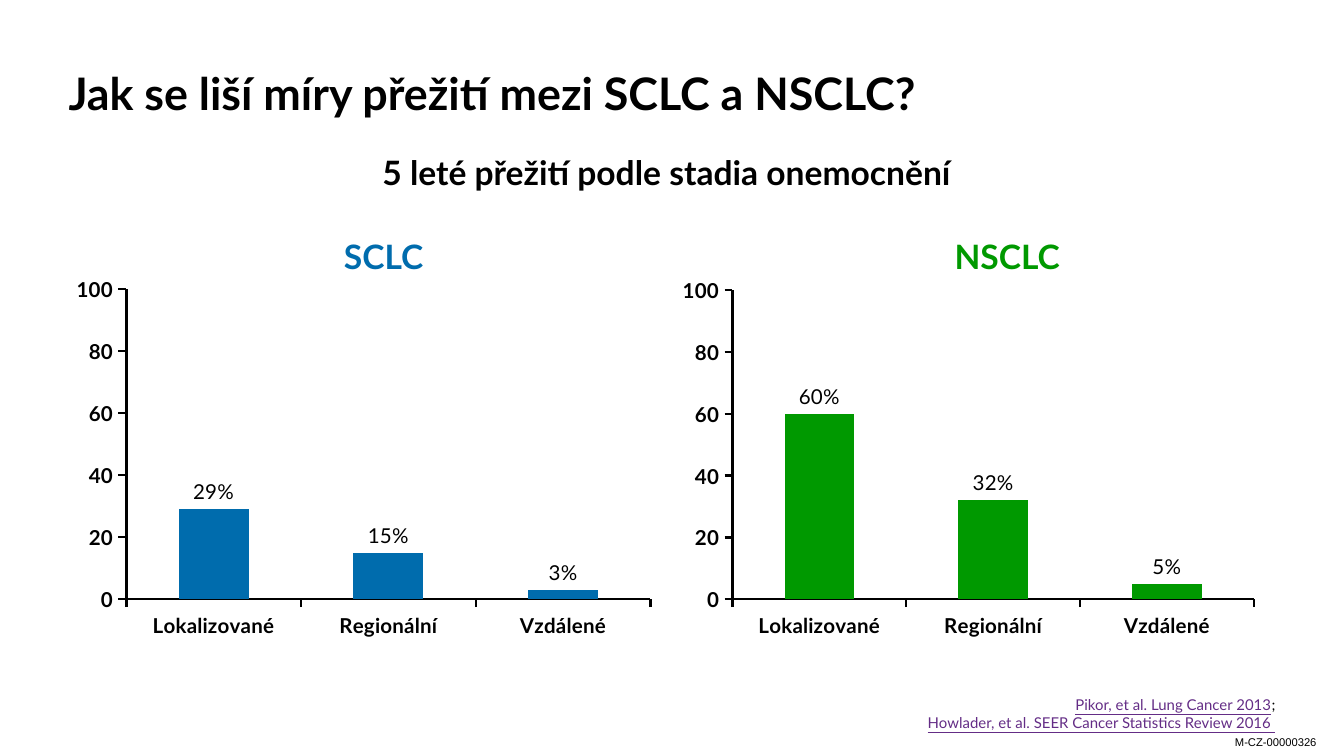
from lxml.etree import SubElement
from pptx import Presentation
from pptx.chart.data import CategoryChartData
from pptx.dml.color import RGBColor
from pptx.enum.chart import XL_CHART_TYPE, XL_LABEL_POSITION, XL_TICK_MARK
from pptx.enum.text import MSO_ANCHOR, PP_ALIGN
from pptx.oxml import parse_xml
from pptx.oxml.ns import nsdecls, qn
from pptx.util import Inches, Pt

BLACK = RGBColor(0x00, 0x00, 0x00)
BLUE = RGBColor(0x00, 0x6C, 0xAD)
GREEN = RGBColor(0x00, 0x99, 0x00)
PURPLE = RGBColor(0x64, 0x2D, 0x86)
STAGES = ["Lokalizované", "Regionální", "Vzdálené"]


def add_run(p, text, size=18, color=BLACK, bold=False, underline=False, font="Lato"):
    r = p.add_run()
    r.text = text
    r.font.name = font
    r.font.size = Pt(size)
    r.font.bold = bold
    r.font.underline = underline
    r.font.color.rgb = color


class SlideBuilder:
    font = "Lato"
    axis_width = Pt(1.25)

    def __init__(self, prs):
        self.slide = prs.slides.add_slide(prs.slide_layouts[5])

    def frame(self, sp, align, anchor, inset, wrap=True):
        tf = sp.text_frame
        tf.word_wrap = wrap
        tf.vertical_anchor = anchor
        if not inset:
            tf.margin_left = tf.margin_right = tf.margin_top = tf.margin_bottom = 0
        p = tf.paragraphs[0]
        p.alignment = align
        return p

    def title(self, box, text):
        sp = self.slide.shapes.title
        sp.left, sp.top, sp.width, sp.height = map(Inches, box)
        p = self.frame(sp, PP_ALIGN.LEFT, MSO_ANCHOR.BOTTOM, False)
        add_run(p, text, size=24, bold=True)

    def text(self, box, align=PP_ALIGN.CENTER, anchor=MSO_ANCHOR.TOP, inset=True, wrap=True):
        sp = self.slide.shapes.add_textbox(*map(Inches, box))
        return self.frame(sp, align, anchor, inset, wrap)

    def heading(self, box, text, color=BLACK):
        add_run(self.text(box), text, color=color, bold=True)

    def column_chart(self, box, values, color, plot_box):
        data = CategoryChartData()
        data.categories = STAGES
        data.add_series("Series 1", values)
        chart = self.slide.shapes.add_chart(
            XL_CHART_TYPE.COLUMN_CLUSTERED, *map(Inches, box), data
        ).chart
        chart.has_title = False
        chart.has_legend = False
        chart.font.name = self.font
        chart.font.size = Pt(11)
        chart.font.bold = True
        chart.font.color.rgb = BLACK
        self.axes(chart)
        self.bars(chart.plots[0], color)
        width, height = box[2:]
        self.plot_layout(chart, [a / b for a, b in zip(plot_box, (width, height) * 2)])

    def axes(self, chart):
        for axis in (chart.category_axis, chart.value_axis):
            axis.has_major_gridlines = False
            axis.major_tick_mark = XL_TICK_MARK.OUTSIDE
            axis.minor_tick_mark = XL_TICK_MARK.NONE
            axis.format.line.color.rgb = BLACK
            axis.format.line.width = self.axis_width
        axis = chart.value_axis
        axis.minimum_scale, axis.maximum_scale, axis.major_unit = 0, 100, 20

    def bars(self, plot, color):
        plot.vary_by_categories = False
        plot.gap_width = 150
        fill = plot.series[0].format.fill
        fill.solid()
        fill.fore_color.rgb = color
        plot.has_data_labels = True
        labels = plot.data_labels
        labels.show_value = True
        labels.position = XL_LABEL_POSITION.OUTSIDE_END
        labels.number_format = '0"%"'
        labels.number_format_is_linked = False
        labels.font.name = self.font
        labels.font.size = Pt(11)
        labels.font.bold = False
        labels.font.color.rgb = BLACK

    def plot_layout(self, chart, fractions):
        area = chart.element.find(".//" + qn("c:plotArea"))
        for old in area.findall(qn("c:layout")):
            area.remove(old)
        layout = parse_xml(f"<c:layout {nsdecls('c')}><c:manualLayout/></c:layout>")
        settings = [("layoutTarget", "inner"), ("xMode", "edge"), ("yMode", "edge")]
        settings += zip("xywh", fractions)
        for name, value in settings:
            SubElement(layout[0], qn(f"c:{name}")).set("val", str(value))
        area.insert(0, layout)


def main():
    prs = Presentation()
    prs.slide_width = Inches(10)
    prs.slide_height = prs.slide_width * 9 // 16
    s = SlideBuilder(prs)

    code = s.text((9.09, 5.42, 0.82, 0.2), align=PP_ALIGN.LEFT, wrap=False)
    add_run(code, "M-CZ-00000326", size=6, font="Arial")
    s.title((0.51, 0.21, 8.98, 0.68), "Jak se liší míry přežití mezi SCLC a NSCLC?")

    s.column_chart((0.47, 1.87, 4.39, 3), (29, 15, 3), BLUE, (0.47, 0.28, 3.9, 2.31))
    s.column_chart((5, 2.01, 4.41, 2.94), (60, 32, 5), GREEN, (0.45, 0.15, 3.88, 2.3))

    s.heading((0.47, 1.08, 8.98, 0.4), "5 leté přežití podle stadia onemocnění")
    s.heading((0.86, 1.71, 3.99, 0.4), "SCLC", BLUE)
    s.heading((5.66, 1.71, 3.67, 0.4), "NSCLC", GREEN)

    p = s.text((4.01, 5.2, 5.48, 0.24), PP_ALIGN.RIGHT, MSO_ANCHOR.BOTTOM, inset=False)
    add_run(p, "Pikor, et al. Lung Cancer 2013", size=8, color=PURPLE, underline=True)
    add_run(p, ";", size=8)
    p.add_line_break()
    add_run(p, "Howlader, et al. SEER Cancer Statistics Review 2016 ", size=8, color=PURPLE, underline=True)

    prs.save("out.pptx")


if __name__ == "__main__":
    main()
